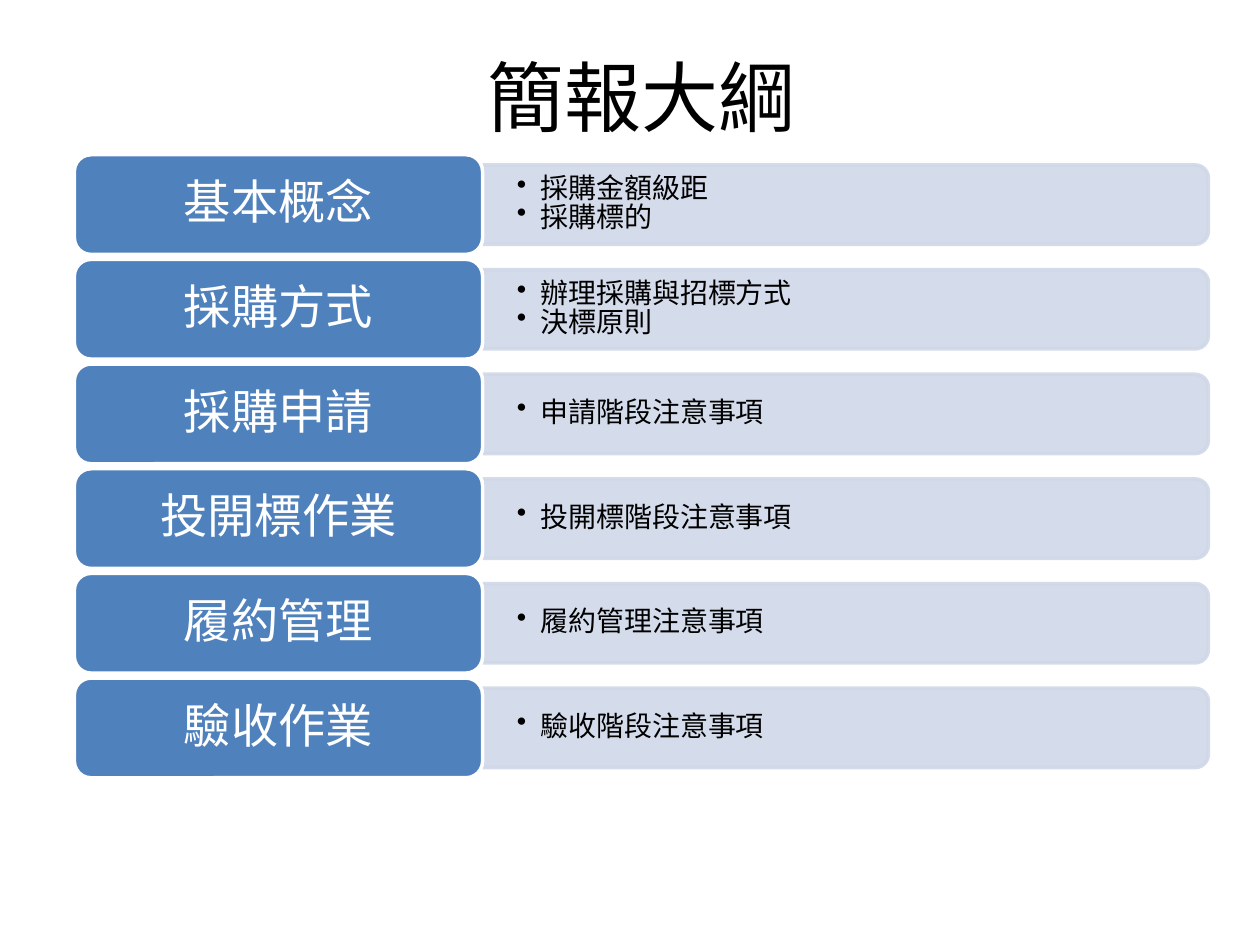
"""Build the outline slide of a procurement briefing."""
from lxml import etree
from pptx import Presentation, util as u
from pptx.dml.color import RGBColor
from pptx.enum import shapes, text
from pptx.oxml import ns

TITLE = "簡報大綱"
SECTIONS = [
    ("基本概念", ["採購金額級距", "採購標的"]),
    ("採購方式", ["辦理採購與招標方式", "決標原則"]),
    ("採購申請", ["申請階段注意事項"]),
    ("投開標作業", ["投開標階段注意事項"]),
    ("履約管理", ["履約管理注意事項"]),
    ("驗收作業", ["驗收階段注意事項"]),
]

FONT = "Noto Sans CJK SC"
BLACK = RGBColor(0x00, 0x00, 0x00)
WHITE = RGBColor(0xFF, 0xFF, 0xFF)
BLUE = RGBColor(0x4F, 0x81, 0xBD)
PALE_BLUE = RGBColor(0xD0, 0xD8, 0xE8)

LEFT, TOP, PITCH = 1.5, 3.12, 2.11
LABEL_WIDTH, LABEL_HEIGHT = 8.23, 2.01
PANEL_WIDTH, PANEL_HEIGHT = 14.63, 1.6
BULLET_INDENT = 0.48


def add_child(parent, tag, **attributes):
    return etree.SubElement(parent, ns.qn(tag), attributes)


def add_block(slide, kind, left, top, width, height, fill, line):
    box = [u.Cm(value) for value in (left, top, width, height)]
    shape = slide.shapes.add_shape(kind, *box)
    shape.shadow.inherit = False
    shape.fill.solid()
    shape.fill.fore_color.rgb = fill
    shape.line.color.rgb = line
    shape.line.width = u.Pt(2)
    return shape


def add_textbox(slide, left, top, width, height):
    box = [u.Cm(value) for value in (left, top, width, height)]
    return slide.shapes.add_textbox(*box)


def write(shape, lines, size, color, align, margin, spacing=1.0, bullets=False):
    frame = shape.text_frame
    frame.word_wrap = True
    frame.vertical_anchor = text.MSO_ANCHOR.MIDDLE
    frame.margin_left = frame.margin_right = u.Cm(margin)
    frame.margin_top = frame.margin_bottom = 0
    for index, line in enumerate(lines):
        paragraph = frame.add_paragraph() if index else frame.paragraphs[0]
        paragraph.alignment = align
        paragraph.line_spacing = spacing
        if bullets:
            properties = paragraph._p.get_or_add_pPr()
            properties.set("marL", str(u.Cm(BULLET_INDENT)))
            properties.set("indent", str(-u.Cm(BULLET_INDENT)))
            add_child(properties, "a:buChar", char="•")
        run = paragraph.add_run()
        run.text = line
        run.font.size = u.Pt(size)
        run.font.color.rgb = color
        run.font.name = FONT
        add_child(run._r.get_or_add_rPr(), "a:ea", typeface=FONT)


def add_section(slide, top, label, points):
    panel_left = LEFT + LABEL_WIDTH
    middle = top + LABEL_HEIGHT / 2
    panel = add_block(
        slide, shapes.MSO_SHAPE.ROUND_2_SAME_RECTANGLE,
        panel_left + (PANEL_WIDTH - PANEL_HEIGHT) / 2, middle - PANEL_WIDTH / 2,
        PANEL_HEIGHT, PANEL_WIDTH, PALE_BLUE, PALE_BLUE)
    panel.rotation = 90
    for color in panel._element.spPr.iter(ns.qn("a:srgbClr")):
        add_child(color, "a:alpha", val="90000")

    details = add_textbox(slide, panel_left, middle - PANEL_HEIGHT / 2,
                          PANEL_WIDTH, PANEL_HEIGHT)
    write(details, points, 16, BLACK, text.PP_ALIGN.LEFT, 0.69, 0.85, bullets=True)

    heading = add_block(slide, shapes.MSO_SHAPE.ROUNDED_RECTANGLE, LEFT, top,
                        LABEL_WIDTH, LABEL_HEIGHT, BLUE, WHITE)
    write(heading, [label], 27, WHITE, text.PP_ALIGN.CENTER, 0.28, 0.9)


def main():
    presentation = Presentation()
    presentation.slide_width, presentation.slide_height = u.Cm(25.4), u.Cm(19.05)
    slide = presentation.slides.add_slide(presentation.slide_layouts[6])
    title = add_textbox(slide, LEFT, 0.33, 22.86, 3.18)
    write(title, [TITLE], 44, BLACK, text.PP_ALIGN.CENTER, 0.25)
    for row, (label, points) in enumerate(SECTIONS):
        add_section(slide, TOP + row * PITCH, label, points)
    presentation.save("out.pptx")


if __name__ == "__main__":
    main()
